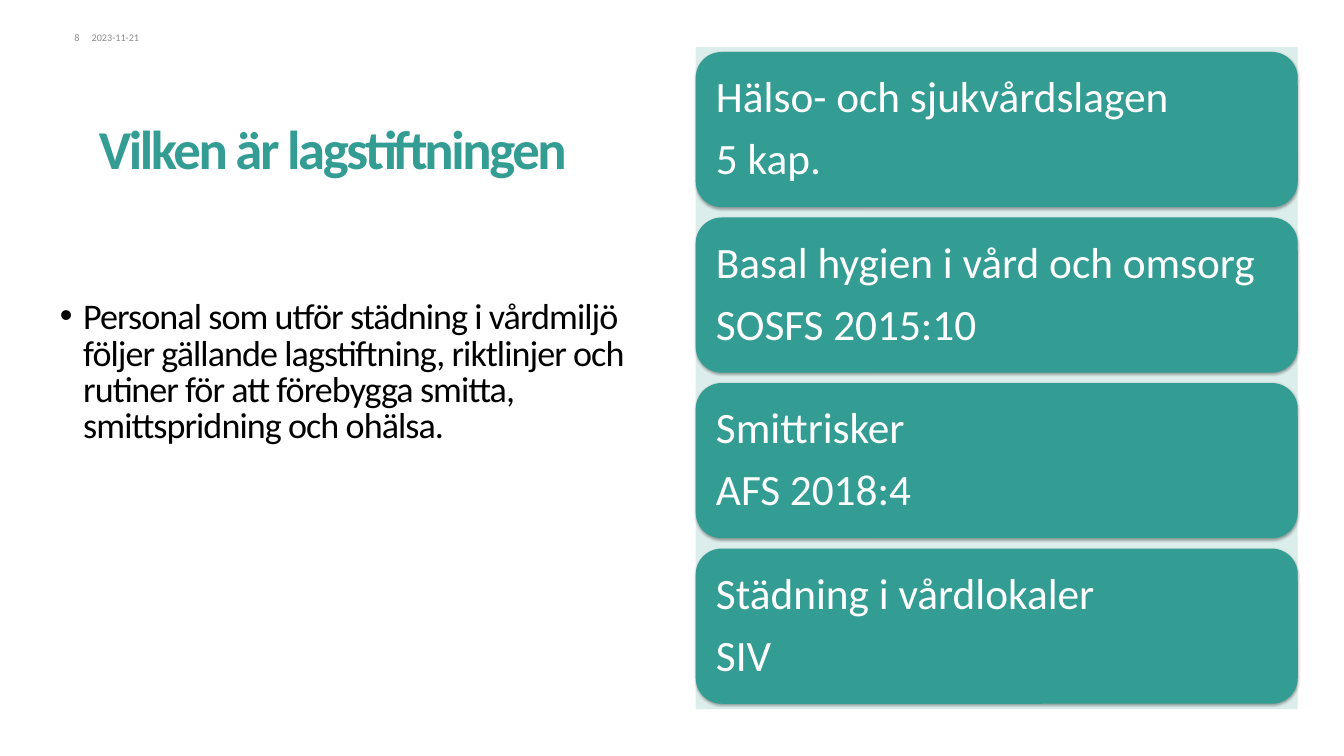
"""Builds the slide about the legislation for cleaning in care settings."""
from lxml.etree import SubElement
from pptx import Presentation
from pptx.dml.color import RGBColor
from pptx.enum.shapes import MSO_SHAPE
from pptx.enum.text import MSO_ANCHOR, PP_ALIGN
from pptx.oxml.ns import qn
from pptx.util import Cm, Pt

TITLE = "Vilken är lagstiftningen"
BODY = ("Personal som utför städning i vårdmiljö följer gällande lagstiftning, "
        "riktlinjer och rutiner för att förebygga smitta, smittspridning och ohälsa.")
LAWS = [
    ("Hälso- och sjukvårdslagen", "5 kap."),
    ("Basal hygien i vård och omsorg", "SOSFS 2015:10"),
    ("Smittrisker", "AFS 2018:4"),
    ("Städning i vårdlokaler", "SIV"),
]
PAGE_NUMBER, DATE = "8", "2023-11-21"

COLORS = {"teal": "339D94", "panel": "DCEEEB", "grey": "8C8C8C",
          "black": "000000", "white": "FFFFFF"}
STYLES = {
    "footer": {"font": {"size": Pt(12)}, "color": "grey",
               "paragraph": {"space_after": Pt(6)}},
    "page": {"font": {"size": Pt(12)}, "color": "grey",
             "paragraph": {"space_after": Pt(6), "alignment": PP_ALIGN.RIGHT}},
    "title": {"font": {"size": Pt(64.5), "bold": True}, "color": "teal", "tracking": -280,
              "paragraph": {"line_spacing": 0.85}},
    "body": {"font": {"size": Pt(42.5)}, "color": "black", "tracking": -110,
             "paragraph": {"line_spacing": 0.84, "space_after": Pt(23)}},
    "law": {"font": {"size": Pt(51)}, "color": "white",
            "paragraph": {"line_spacing": 0.9, "space_after": Pt(17.85),
                          "alignment": PP_ALIGN.LEFT}},
}
PANEL_LEFT, PANEL_TOP, PANEL_WIDTH, PANEL_HEIGHT = 28.91, 1.96, 25.02, 27.51
CARD_TOP, CARD_HEIGHT, CARD_PITCH, CARD_INSET = 2.16, 6.45, 6.88, 0.53


def set_all(target, values):
    for key, value in values.items():
        setattr(target, key, value)


def write(frame, lines, style, insets=(0, 0, 0, 0), anchor=MSO_ANCHOR.TOP):
    sides = ("margin_left", "margin_top", "margin_right", "margin_bottom")
    set_all(frame, {"word_wrap": True, "vertical_anchor": anchor,
                    **dict(zip(sides, map(Cm, insets)))})
    look = STYLES[style]
    for index, line in enumerate(lines):
        paragraph = frame.add_paragraph() if index else frame.paragraphs[0]
        set_all(paragraph, look["paragraph"])
        run = paragraph.add_run()
        run.text = line
        set_all(run.font, {"name": "Calibri", **look["font"]})
        run.font.color.rgb = RGBColor.from_string(COLORS[look["color"]])
        if "tracking" in look:
            run._r.get_or_add_rPr().set("spc", str(look["tracking"]))


def add_text(slide, box, text, style, **layout):
    frame = slide.shapes.add_textbox(*map(Cm, box)).text_frame
    write(frame, [text], style, **layout)
    return frame


def add_block(slide, kind, box, color):
    block = slide.shapes.add_shape(kind, *map(Cm, box))
    block.shadow.inherit = False
    block.fill.solid()
    block.fill.fore_color.rgb = RGBColor.from_string(COLORS[color])
    block.line.fill.background()
    return block


def add_bullet(paragraph, indent):
    properties = paragraph._p.get_or_add_pPr()
    properties.set("marL", str(Cm(indent)))
    properties.set("indent", str(-Cm(indent)))
    SubElement(properties, qn("a:buFont"), typeface="Arial")
    SubElement(properties, qn("a:buChar"), char="•")


def add_shadow(block):
    effects = block._element.spPr.find(qn("a:effectLst"))
    shadow = SubElement(effects, qn("a:outerShdw"), blurRad=str(Pt(3.1)),
                        dist=str(Pt(1.8)), dir="5400000", rotWithShape="0")
    tint = SubElement(shadow, qn("a:srgbClr"), val=COLORS["black"])
    SubElement(tint, qn("a:alpha"), val="35000")


def main():
    deck = Presentation()
    set_all(deck, {"slide_width": Cm(55.85), "slide_height": Cm(31.42)})
    slide = deck.slides.add_slide(deck.slide_layouts[6])

    add_block(slide, MSO_SHAPE.RECTANGLE,
              (PANEL_LEFT, PANEL_TOP, PANEL_WIDTH, PANEL_HEIGHT), "panel")
    add_text(slide, (3.81, 1.32, 2.21, 0.51), DATE, "footer")
    add_text(slide, (2.31, 1.32, 1, 0.51), PAGE_NUMBER, "page")
    body = add_text(slide, (2.49, 12.5, 25.02, 15.01), BODY, "body")
    add_bullet(body.paragraphs[0], 0.97)
    add_text(slide, (4.11, 2.06, 21.74, 5.66), TITLE, "title",
             insets=(0, 0, 0, 0.2), anchor=MSO_ANCHOR.BOTTOM)

    for row, law in enumerate(LAWS):
        top = CARD_TOP + row * CARD_PITCH
        card = add_block(slide, MSO_SHAPE.ROUNDED_RECTANGLE,
                         (PANEL_LEFT, top, PANEL_WIDTH, CARD_HEIGHT), "teal")
        add_shadow(card)
        write(card.text_frame, law, "law", (CARD_INSET,) * 4, MSO_ANCHOR.MIDDLE)

    deck.save("out.pptx")


if __name__ == "__main__":
    main()
